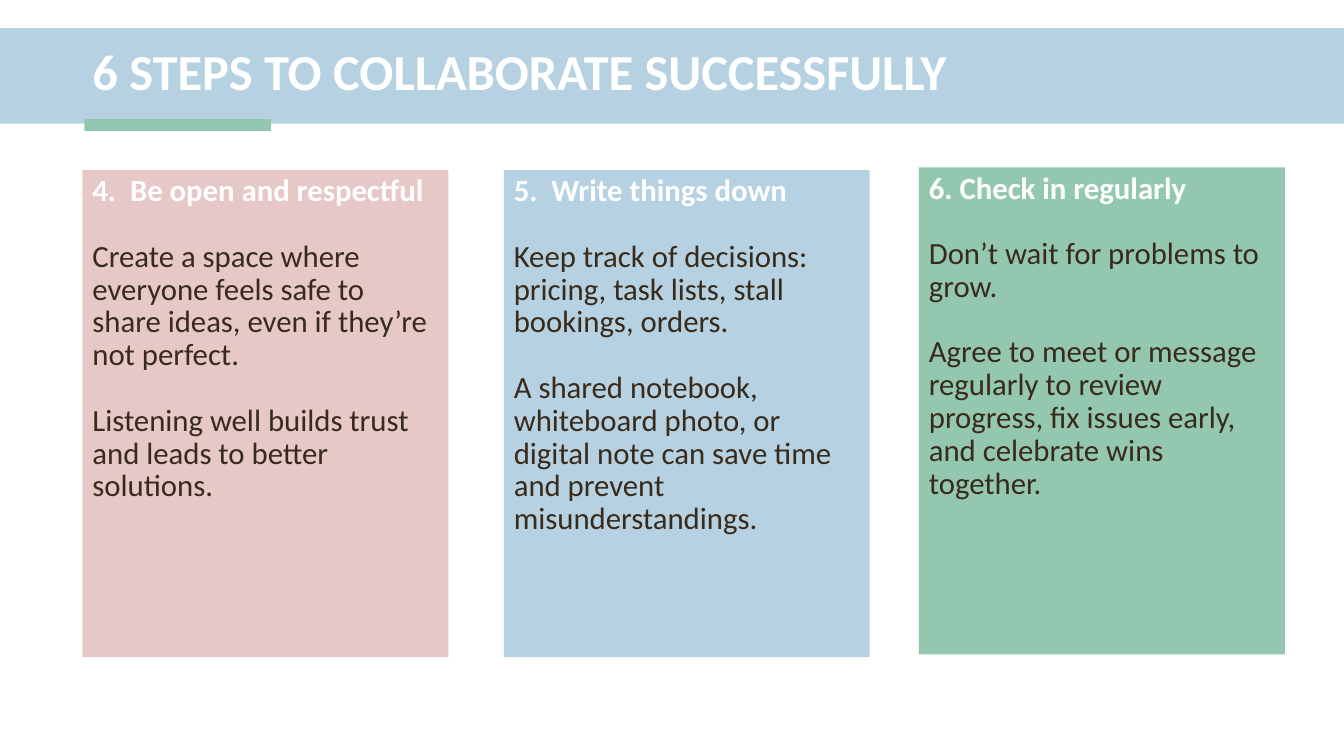
from pptx import Presentation
from pptx.dml.color import RGBColor
from pptx.enum.shapes import MSO_SHAPE
from pptx.enum.text import MSO_ANCHOR, PP_ALIGN
from pptx.util import Cm, Pt

RECT = MSO_SHAPE.RECTANGLE
TOP, MIDDLE = MSO_ANCHOR.TOP, MSO_ANCHOR.MIDDLE
LEFT = PP_ALIGN.LEFT

BLUE, GREEN, PINK = "B6D1E1", "94C7B0", "E6C8C7"
WHITE, BROWN = "FFFFFF", "382B1B"


def rgb(value):
    return RGBColor.from_string(value)


class Deck:
    font = "Calibri"
    title_size = Pt(36)
    card_size = Pt(22)
    card_leading = Pt(23.4)

    def __init__(self, width, height):
        self.prs = Presentation()
        self.prs.slide_width, self.prs.slide_height = Cm(width), Cm(height)
        self.s = self.prs.slides.add_slide(self.prs.slide_layouts[6])

    def rect(self, x, y, w, h, fill):
        sp = self.s.shapes.add_shape(RECT, Cm(x), Cm(y), Cm(w), Cm(h))
        sp.shadow.inherit = False
        sp.fill.solid()
        sp.fill.fore_color.rgb = rgb(fill)
        sp.line.fill.background()
        return sp

    def run(self, p, text, size, color, bold=False):
        r = p.add_run()
        r.text = text
        r.font.name, r.font.size, r.font.bold = self.font, size, bold
        r.font.color.rgb = rgb(color)

    def title(self, x, y, w, h, text):
        tf = self.s.shapes.add_textbox(Cm(x), Cm(y), Cm(w), Cm(h)).text_frame
        tf.word_wrap = True
        tf.vertical_anchor = MIDDLE
        p = tf.paragraphs[0]
        p.line_spacing = 0.9
        self.run(p, text, self.title_size, WHITE, True)

    def card(self, x, y, w, h, fill, heading, body):
        tf = self.rect(x, y, w, h, fill).text_frame
        tf.word_wrap = True
        tf.vertical_anchor = TOP
        for i, text in enumerate([heading, *body]):
            p = tf.add_paragraph() if i else tf.paragraphs[0]
            p.alignment = LEFT
            p.line_spacing = self.card_leading
            if i:
                p.space_before = self.card_leading
            self.run(p, text, self.card_size, BROWN if i else WHITE, not i)


def main():
    deck = Deck(33.87, 19.05)

    # Title band with accent bar
    deck.rect(0, 0.71, 33.87, 2.41, BLUE)
    deck.rect(2.13, 3, 4.7, 0.3, GREEN)
    deck.title(2.08, 0.86, 30.3, 2.01, "6 STEPS TO COLLABORATE SUCCESSFULLY")

    # Step cards: left, top, fill, heading, body
    cards = [
        (2.08, 4.29, PINK, "4.  Be open and respectful", [
            "Create a space where everyone feels safe to share ideas, "
            "even if they’re not perfect.",
            "Listening well builds trust and leads to better solutions."]),
        (12.7, 4.29, BLUE, "5.  Write things down", [
            "Keep track of decisions: pricing, task lists, stall bookings, orders.",
            "A shared notebook, whiteboard photo, or digital note can save time "
            "and prevent misunderstandings."]),
        (23.16, 4.22, GREEN, "6. Check in regularly", [
            "Don’t wait for problems to grow.",
            "Agree to meet or message regularly to review progress, "
            "fix issues early, and celebrate wins together."]),
    ]
    for x, y, fill, heading, body in cards:
        deck.card(x, y, 9.22, 12.27, fill, heading, body)

    deck.prs.save("out.pptx")


if __name__ == "__main__":
    main()
